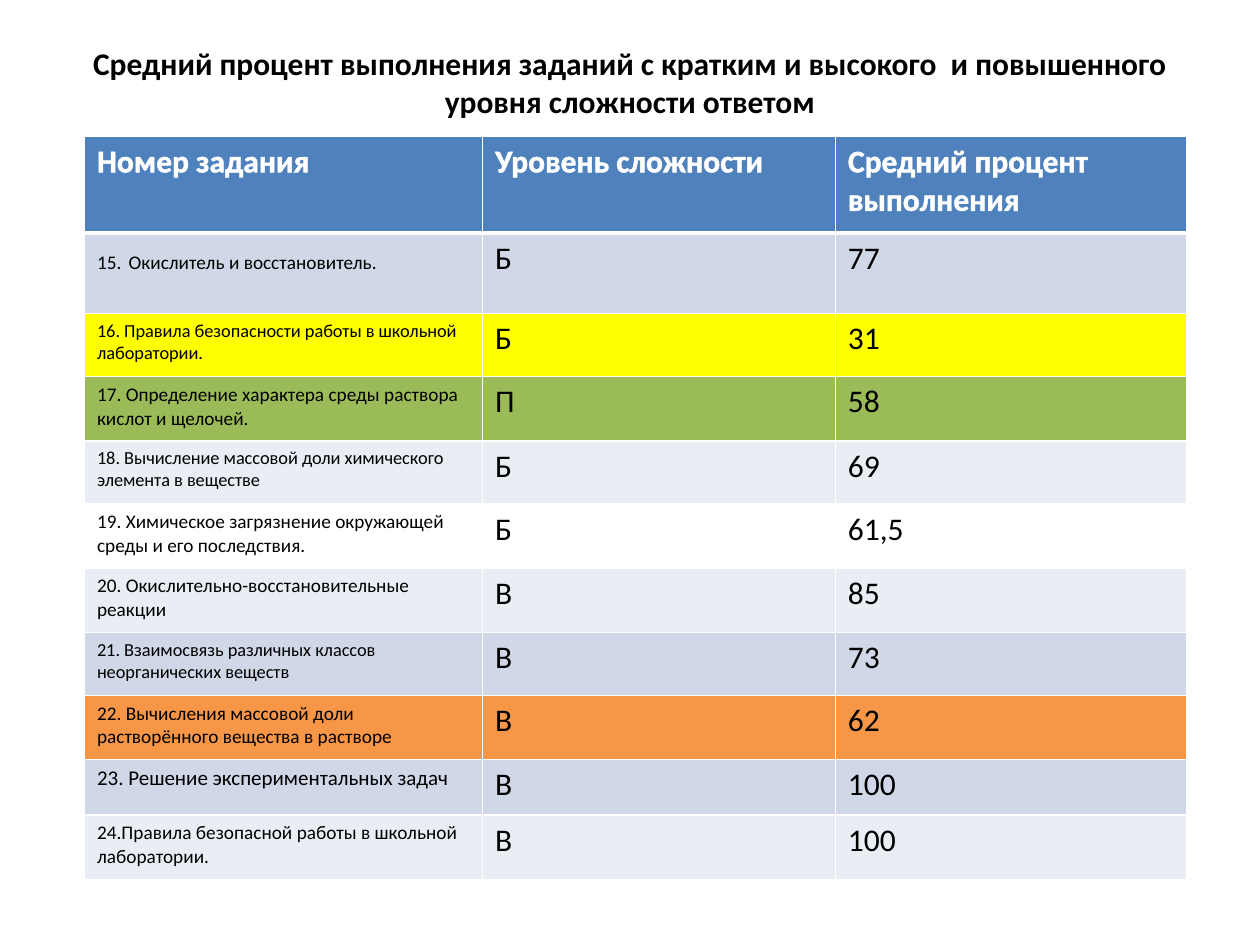
from lxml.etree import SubElement
from pptx import Presentation
from pptx.dml.color import RGBColor
from pptx.enum.text import MSO_ANCHOR as Anchor, PP_ALIGN as Align
from pptx.oxml import parse_xml
from pptx.oxml.ns import nsdecls, qn
from pptx.util import Inches, Pt

TITLE = ("Средний процент выполнения заданий с кратким и высокого  "
         "и повышенного уровня сложности ответом")
HEAD = ("Номер задания", "Уровень сложности", "Средний процент выполнения")
BLUE, PALE, WHITE = "D0D8E8", "E9EDF4", "FFFFFF"
COLS = (3.16, 2.8, 2.79)
TASKS = (
    (0.64, BLUE, 11, "15. Окислитель и восстановитель.", "Б", "77"),
    (0.5, "FFFF00", 10.5, "16. Правила безопасности работы в школьной лаборатории.", "Б", "31"),
    (0.51, "9BBB59", 11, "17. Определение характера среды раствора кислот и щелочей.", "П", "58"),
    (0.5, PALE, 10.5, "18. Вычисление массовой доли химического элемента в веществе", "Б", "69"),
    (0.51, WHITE, 11, "19. Химическое загрязнение окружающей среды и его последствия.", "Б", "61,5"),
    (0.51, PALE, 11, "20. Окислительно-восстановительные реакции", "В", "85"),
    (0.5, BLUE, 10.5, "21. Взаимосвязь различных классов\nнеорганических веществ", "В", "73"),
    (0.51, "F79646", 11, "22. Вычисления массовой доли растворённого вещества в растворе", "В", "62"),
    (0.44, BLUE, 12, "23. Решение экспериментальных задач", "В", "100"),
    (0.51, PALE, 11, "24.Правила безопасной работы в школьной лаборатории.", "В", "100"),
)


def paint(fmt, color):
    """Give a fill a solid colour."""
    fmt.solid()
    fmt.fore_color.rgb = RGBColor.from_string(color)


def style(run, size, color="000000", bold=False):
    """Format one run."""
    font = run.font
    font.name, font.size, font.bold = "Calibri", Pt(size), bold
    paint(font.fill, color)


def outline(run):
    """Draw a thin white outline round the letters of a run."""
    line = parse_xml(f'<a:ln {nsdecls("a")} w="9525"><a:solidFill>'
                     f'<a:srgbClr val="{WHITE}"/></a:solidFill></a:ln>')
    run._r.get_or_add_rPr().insert(0, line)


def border(cell, top=1, bottom=1):
    """Draw white borders round a cell."""
    props = cell._tc.get_or_add_tcPr()
    for spot, (side, width) in enumerate(zip("LRTB", (1, 1, top, bottom))):
        line = props.makeelement(qn(f"a:ln{side}"), {"w": str(Pt(width))})
        fill = SubElement(line, qn("a:solidFill"))
        SubElement(fill, qn("a:srgbClr"), val=WHITE)
        props.insert(spot, line)


def add_title(slide):
    """Place and format the title."""
    title = slide.shapes.title
    title.left, title.top = Inches(0.5), Inches(0.3)
    title.width, title.height = Inches(9), Inches(0.7)
    frame = title.text_frame
    frame.text = TITLE
    frame.word_wrap = True
    frame.vertical_anchor = Anchor.MIDDLE
    par = frame.paragraphs[0]
    par.alignment = Align.CENTER
    style(par.runs[0], 18, bold=True)


def fill_head(row):
    """Write the header row."""
    row.height = Inches(0.77)
    for cell, text in zip(row.cells, HEAD):
        cell.text = text
        run = cell.text_frame.paragraphs[0].runs[0]
        style(run, 18, WHITE, True)
        outline(run)
        paint(cell.fill, "4F81BD")
        border(cell, bottom=3)


def fill_task(row, task, top):
    """Write one task row."""
    height, color, size, *texts = task
    row.height = Inches(height)
    for cell, text, points in zip(row.cells, texts, (size, 18, 18)):
        cell.text = text
        for par in cell.text_frame.paragraphs:
            style(par.runs[0], points)
        paint(cell.fill, color)
        border(cell, top)


def space_out(cell):
    """Enlarge the space between the number and the name of a task."""
    par = cell.text_frame.paragraphs[0]
    number, name = par.text.split(" ", 1)
    par.clear()
    for text, size in ((number, 11), (" ", 18), (name, 11)):
        run = par.add_run()
        run.text = text
        style(run, size)


def add_grid(slide):
    """Build the table of results."""
    height = 0.77 + sum(task[0] for task in TASKS)
    grid = slide.shapes.add_table(len(TASKS) + 1, len(COLS), Inches(0.67),
                                  Inches(1.08), Inches(sum(COLS)), Inches(height)).table
    for col, width in zip(grid.columns, COLS):
        col.width = Inches(width)
    fill_head(grid.rows[0])
    for num, task in enumerate(TASKS, 1):
        fill_task(grid.rows[num], task, 3 if num == 1 else 1)
    space_out(grid.cell(1, 0))


def main():
    """Build and save the slide."""
    deck = Presentation()
    deck.slide_width, deck.slide_height = Inches(10), Inches(7.5)
    slide = deck.slides.add_slide(deck.slide_layouts[5])
    paint(slide.background.fill, WHITE)
    add_title(slide)
    add_grid(slide)
    deck.save("out.pptx")


if __name__ == "__main__":
    main()
